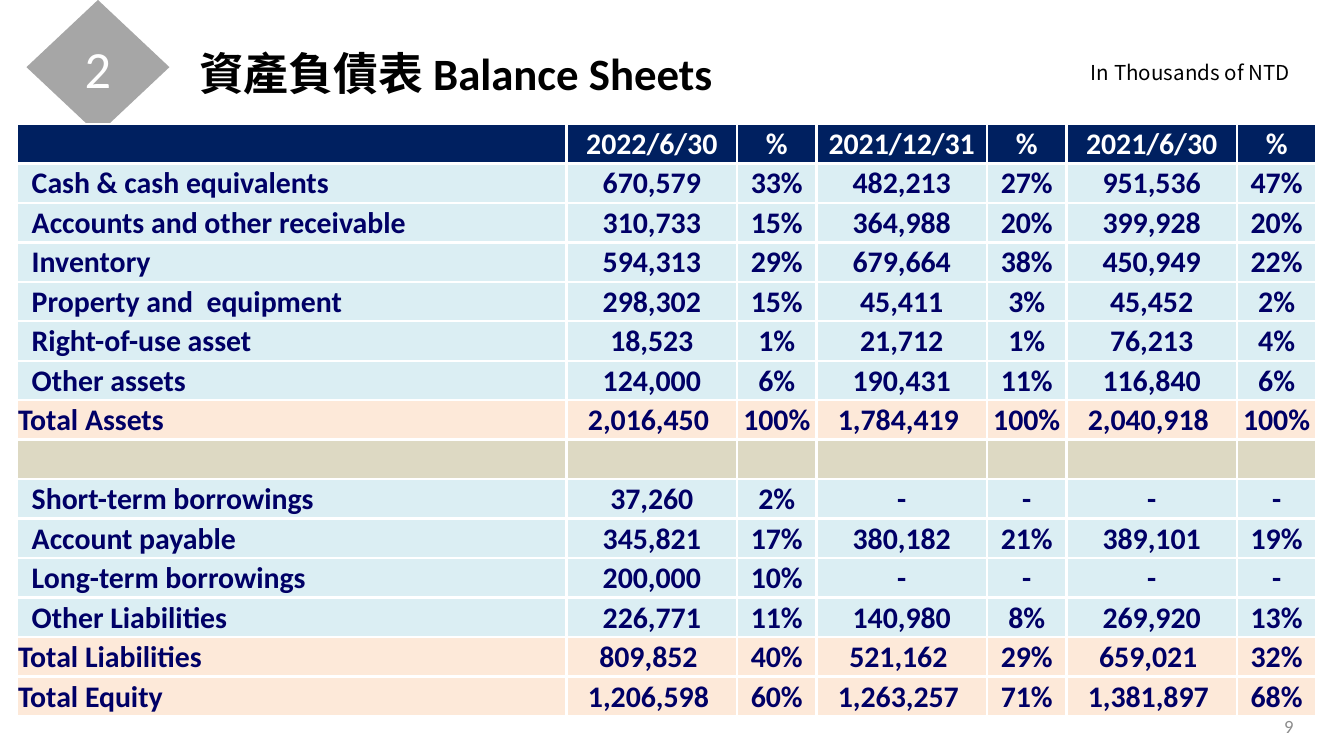
from pptx import Presentation
from pptx.dml.color import RGBColor
from pptx.enum import shapes, text
from pptx.oxml import ns
from pptx.util import Pt
from lxml import etree

NAVY = RGBColor(0x00, 0x20, 0x60)
INK = RGBColor(0x00, 0x00, 0x66)
ITEM = RGBColor(0xDB, 0xEE, 0xF3)
TOTAL = RGBColor(0xFD, 0xE9, 0xD9)
SPACER = RGBColor(0xDD, 0xD9, 0xC3)
GREY = RGBColor(0xA6, 0xA6, 0xA6)
PAGE_GREY = RGBColor(0x8C, 0x8C, 0x8C)
BLACK = RGBColor(0, 0, 0)
WHITE = RGBColor(0xFF, 0xFF, 0xFF)
LATIN = "Calibri"
CJK = "Noto Sans CJK SC"
LEFT, CENTER, RIGHT = text.PP_ALIGN.LEFT, text.PP_ALIGN.CENTER, text.PP_ALIGN.RIGHT

COLUMNS = [294.5] + [91.4, 42.5] * 3
ROW_HEIGHT = 21.15
ROWS = [
    ["", "2022/6/30", "%", "2021/12/31", "%", "2021/6/30", "%"],
    ["Cash & cash equivalents", "670,579", "33%", "482,213", "27%", "951,536", "47%"],
    ["Accounts and other receivable", "310,733", "15%", "364,988", "20%", "399,928", "20%"],
    ["Inventory", "594,313", "29%", "679,664", "38%", "450,949", "22%"],
    ["Property and  equipment", "298,302", "15%", "45,411", "3%", "45,452", "2%"],
    ["Right-of-use asset", "18,523", "1%", "21,712", "1%", "76,213", "4%"],
    ["Other assets", "124,000", "6%", "190,431", "11%", "116,840", "6%"],
    ["Total Assets", "2,016,450", "100%", "1,784,419", "100%", "2,040,918", "100%"],
    [""] * 7,
    ["Short-term borrowings", "37,260", "2%", "-", "-", "-", "-"],
    ["Account payable", "345,821", "17%", "380,182", "21%", "389,101", "19%"],
    ["Long-term borrowings", "200,000", "10%", "-", "-", "-", "-"],
    ["Other Liabilities", "226,771", "11%", "140,980", "8%", "269,920", "13%"],
    ["Total Liabilities", "809,852", "40%", "521,162", "29%", "659,021", "32%"],
    ["Total Equity", "1,206,598", "60%", "1,263,257", "71%", "1,381,897", "68%"],
]


def style_run(r, size, color, name=LATIN, bold=False):
    """Format one run, with the same face for Latin and East Asian text."""
    r.font.size, r.font.bold, r.font.name = Pt(size), bold, name
    r.font.color.rgb = color
    etree.SubElement(r._r.get_or_add_rPr(), ns.qn("a:ea")).set("typeface", name)


def add_title(s):
    """Fill and place the two-language title."""
    sp = s.shapes.title
    sp.left, sp.top, sp.width, sp.height = Pt(99.4), Pt(20.9), Pt(572.4), Pt(38.2)
    tf = sp.text_frame
    tf.auto_size = text.MSO_AUTO_SIZE.NONE
    tf.vertical_anchor = text.MSO_ANCHOR.TOP
    p = tf.paragraphs[0]
    p.alignment = LEFT
    for words, name in (("資產負債表 ", CJK), ("Balance Sheets", LATIN)):
        r = p.add_run()
        r.text = words
        style_run(r, 24, BLACK, name, True)


def add_label(s, words, box, size, color, name=LATIN, align=LEFT, anchor=text.MSO_ANCHOR.TOP):
    """Add a one-line text box."""
    tf = s.shapes.add_textbox(*map(Pt, box)).text_frame
    tf.word_wrap = True
    tf.vertical_anchor = anchor
    tf.text = words
    p = tf.paragraphs[0]
    p.alignment = align
    style_run(p.runs[0], size, color, name)


def add_badge(s, number):
    """Add the section diamond with its number."""
    sp = s.shapes.add_shape(shapes.MSO_SHAPE.DIAMOND, Pt(14.2), Pt(0), Pt(76.6), Pt(72))
    sp.shadow.inherit = False
    sp.fill.solid()
    sp.fill.fore_color.rgb = GREY
    sp.line.fill.background()
    tf = sp.text_frame
    tf.vertical_anchor = text.MSO_ANCHOR.MIDDLE
    tf.text = number
    p = tf.paragraphs[0]
    p.alignment = CENTER
    style_run(p.runs[0], 28, WHITE)


def add_borders(cell):
    """Draw white lines on the four sides of a cell."""
    tc_pr = cell._tc.get_or_add_tcPr()
    for side in ("lnL", "lnR", "lnT", "lnB"):
        ln = etree.SubElement(tc_pr, ns.qn(f"a:{side}"), w=str(Pt(1.5)))
        fill = etree.SubElement(ln, ns.qn("a:solidFill"))
        etree.SubElement(fill, ns.qn("a:srgbClr"), val=str(WHITE))


def fill_cell(cell, words, fill, color, align, left, right):
    """Write and format one table cell."""
    add_borders(cell)
    cell.fill.solid()
    cell.fill.fore_color.rgb = fill
    cell.vertical_anchor = text.MSO_ANCHOR.MIDDLE
    cell.margin_left, cell.margin_right = Pt(left), Pt(right)
    cell.margin_top, cell.margin_bottom = Pt(0.7), Pt(0)
    p = cell.text_frame.paragraphs[0]
    p.text = words
    p.alignment = align
    p._p.get_or_add_endParaRPr().set("sz", "1600")
    for r in p.runs:
        style_run(r, 16, color, bold=True)


def row_fill(index, label):
    """Choose a row's fill from its role."""
    if index == 0:
        return NAVY
    if not label:
        return SPACER
    return TOTAL if label.startswith("Total") else ITEM


def add_balance_table(s):
    """Add the balance sheet."""
    frame = s.shapes.add_table(len(ROWS), len(COLUMNS), Pt(9), Pt(66.4),
                               Pt(sum(COLUMNS)), Pt(ROW_HEIGHT * len(ROWS)))
    table = frame.table
    for column, width in zip(table.columns, COLUMNS):
        column.width = Pt(width)
    for i, values in enumerate(ROWS):
        table.rows[i].height = Pt(ROW_HEIGHT)
        fill = row_fill(i, values[0])
        color = WHITE if i == 0 else INK
        for j, words in enumerate(values):
            left = 8 if j == 0 and fill == ITEM else 0.7
            right = 4.3 if j % 2 and fill == TOTAL else 0.7
            fill_cell(table.cell(i, j), words, fill, color, CENTER if j else LEFT, left, right)


def main():
    """Build the balance sheet slide."""
    prs = Presentation()
    prs.slide_width, prs.slide_height = Pt(720), Pt(405)
    s = prs.slides.add_slide(prs.slide_layouts[5])
    add_label(s, "9", (532, 378, 168, 21.6), 10, PAGE_GREY,
              align=RIGHT, anchor=text.MSO_ANCHOR.MIDDLE)
    add_badge(s, "2")
    add_title(s)
    add_balance_table(s)
    add_label(s, "In Thousands of NTD", (577.4, 28.8, 129.6, 20.9), 11, BLACK, CJK)
    prs.save("out.pptx")


if __name__ == "__main__":
    main()
